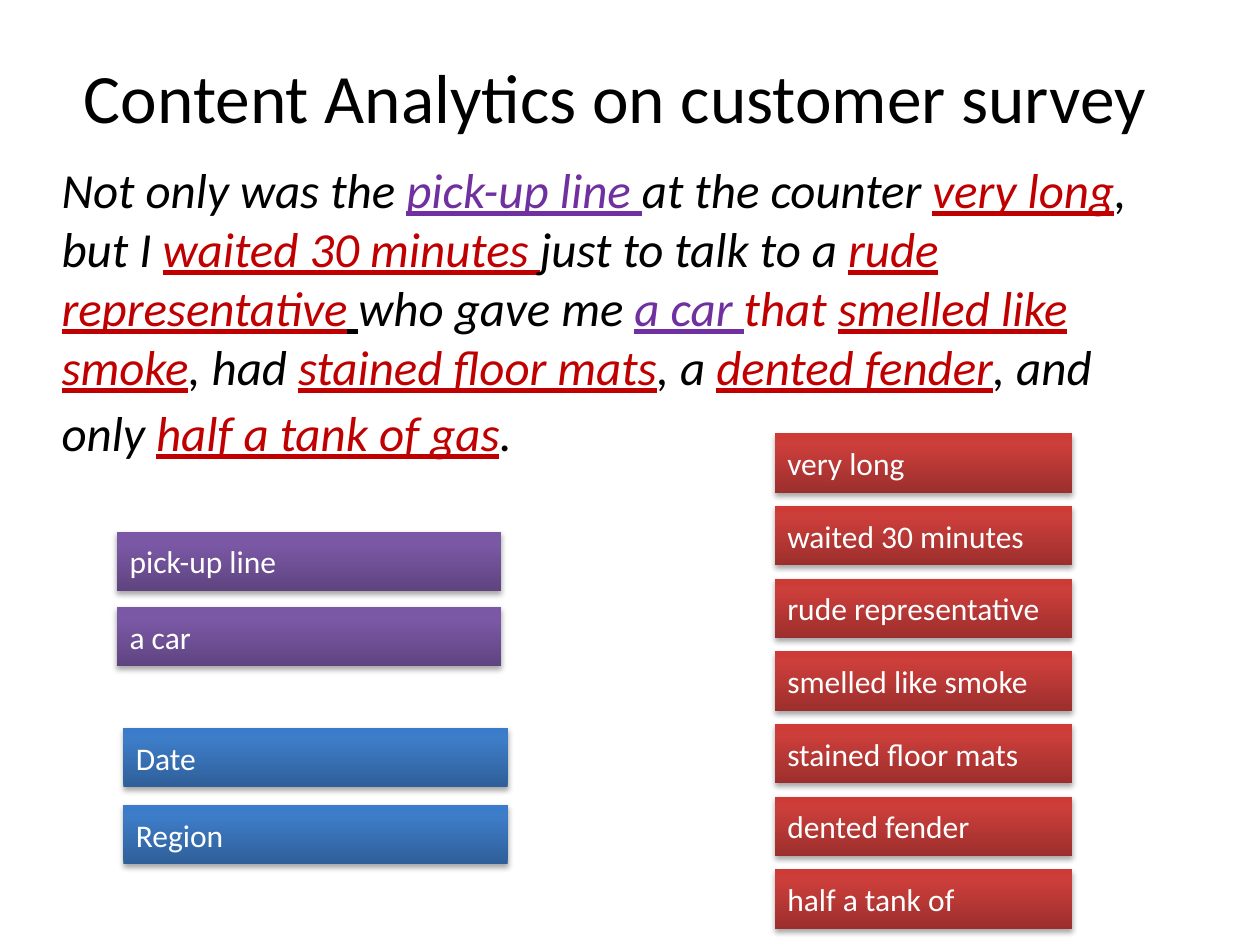
import copy

import pptx
import pptx.dml.color
import pptx.enum.dml
import pptx.enum.shapes
import pptx.enum.text
import pptx.oxml
import pptx.oxml.ns
import pptx.util

Inches = pptx.util.Inches
RGBColor = pptx.dml.color.RGBColor

BLACK = RGBColor(0x00, 0x00, 0x00)
WHITE = RGBColor(0xFF, 0xFF, 0xFF)
PURPLE = RGBColor(0x70, 0x30, 0xA0)
RED = RGBColor(0xC0, 0x00, 0x00)

RED_FADE = [RGBColor(0x9C, 0x2F, 0x2D), RGBColor(0xCB, 0x3E, 0x3A), RGBColor(0xCE, 0x3B, 0x37)]
PURPLE_FADE = [RGBColor(0x5F, 0x44, 0x80), RGBColor(0x7B, 0x58, 0xA6), RGBColor(0x7C, 0x57, 0xA8)]
BLUE_FADE = [RGBColor(0x2F, 0x5F, 0x99), RGBColor(0x3D, 0x7C, 0xC7), RGBColor(0x3A, 0x7C, 0xCB)]
FADE_POSITIONS = [0, 0.8, 1]

FONT = "Calibri"
TAG_HEIGHT = Inches(0.47)

SURVEY_ANSWER = [
    ("Not only was the ", BLACK, False),
    ("pick-up line ", PURPLE, True),
    ("at the counter ", BLACK, False),
    ("very long", RED, True),
    (", but I ", BLACK, False),
    ("waited 30 minutes ", RED, True),
    ("just to talk to a ", BLACK, False),
    ("rude representative", RED, True),
    (" ", BLACK, True),
    ("who gave me ", BLACK, False),
    ("a car ", PURPLE, True),
    ("that ", RED, False),
    ("smelled like smoke", RED, True),
    (", had ", BLACK, False),
    ("stained floor mats", RED, True),
    (", a ", BLACK, False),
    ("dented fender", RED, True),
    (", and only ", BLACK, False),
    ("half a tank of gas", RED, True),
    (". ", BLACK, False),
]
COMPLAINTS = [
    "very long", "waited 30 minutes", "rude representative", "smelled like smoke",
    "stained floor mats", "dented fender", "half a tank of",
]


def add_text(p, text, size=18, color=BLACK, italic=None, underline=None):
    r = p.add_run()
    r.text = text
    r.font.name = FONT
    r.font.size = pptx.util.Pt(size)
    r.font.color.rgb = color
    r.font.italic = italic
    r.font.underline = underline


def add_title(s, left, top, width, height):
    sp = s.shapes.title
    sp.left, sp.top, sp.width, sp.height = left, top, width, height
    tf = sp.text_frame
    tf.auto_size = pptx.enum.text.MSO_AUTO_SIZE.NONE
    tf.vertical_anchor = pptx.enum.text.MSO_ANCHOR.MIDDLE
    p = tf.paragraphs[0]
    p.alignment = pptx.enum.text.PP_ALIGN.CENTER
    add_text(p, "Content Analytics on customer survey ", size=39.6)


def add_answer(s, left, top, width, height):
    tf = s.shapes.add_textbox(left, top, width, height).text_frame
    tf.word_wrap = True
    tf.auto_size = pptx.enum.text.MSO_AUTO_SIZE.SHAPE_TO_FIT_TEXT
    p = tf.paragraphs[0]
    for text, color, underline in SURVEY_ANSWER:
        add_text(p, text, size=28, color=color, italic=True, underline=underline)
    add_text(p, " ", size=32)


def set_fade(sp, colors):
    sp.fill.gradient()
    sp.fill.gradient_angle = 90
    stops = sp._element.spPr.find(".//" + pptx.oxml.ns.qn("a:gsLst"))
    stops.insert(1, copy.deepcopy(stops[0]))
    for stop, position, color in zip(sp.fill.gradient_stops, FADE_POSITIONS, colors):
        stop.position = position
        stop.color.rgb = color


def set_shadow(sp):
    sp.shadow.inherit = False
    effects = sp._element.spPr.find(pptx.oxml.ns.qn("a:effectLst"))
    effects.append(pptx.oxml.parse_xml(
        f'<a:outerShdw {pptx.oxml.ns.nsdecls("a")} blurRad="{pptx.util.Pt(3.1)}" '
        f'dist="{pptx.util.Pt(1.8)}" dir="5400000" rotWithShape="0">'
        '<a:srgbClr val="000000"><a:alpha val="35000"/></a:srgbClr></a:outerShdw>'))


def add_tag_column(s, left, top, width, height, labels, colors):
    step = (height - TAG_HEIGHT) / (len(labels) - 1)
    for i, label in enumerate(labels):
        sp = s.shapes.add_shape(pptx.enum.shapes.MSO_SHAPE.RECTANGLE,
                                left, round(top + i * step), width, TAG_HEIGHT)
        set_fade(sp, colors)
        sp.line.fill.background()
        set_shadow(sp)
        tf = sp.text_frame
        tf.word_wrap = True
        tf.vertical_anchor = pptx.enum.text.MSO_ANCHOR.MIDDLE
        p = tf.paragraphs[0]
        p.alignment = pptx.enum.text.PP_ALIGN.LEFT
        add_text(p, label, color=WHITE)


def main():
    prs = pptx.Presentation()
    prs.slide_width = Inches(10)
    prs.slide_height = Inches(7.5)
    s = prs.slides.add_slide(prs.slide_layouts.get_by_name("Title Only"))
    add_title(s, Inches(0.32), Inches(0.29), Inches(9.25), Inches(0.94))
    add_answer(s, Inches(0.39), Inches(1.22), Inches(8.92), Inches(2.52))
    add_tag_column(s, Inches(6.15), Inches(3.44), Inches(2.36), Inches(3.93),
                   COMPLAINTS, RED_FADE)
    add_tag_column(s, Inches(0.93), Inches(4.22), Inches(3.05), Inches(1.07),
                   ["pick-up line", "a car"], PURPLE_FADE)
    add_tag_column(s, Inches(0.98), Inches(5.78), Inches(3.05), Inches(1.08),
                   ["Date", "Region"], BLUE_FADE)
    prs.save("out.pptx")


if __name__ == "__main__":
    main()
